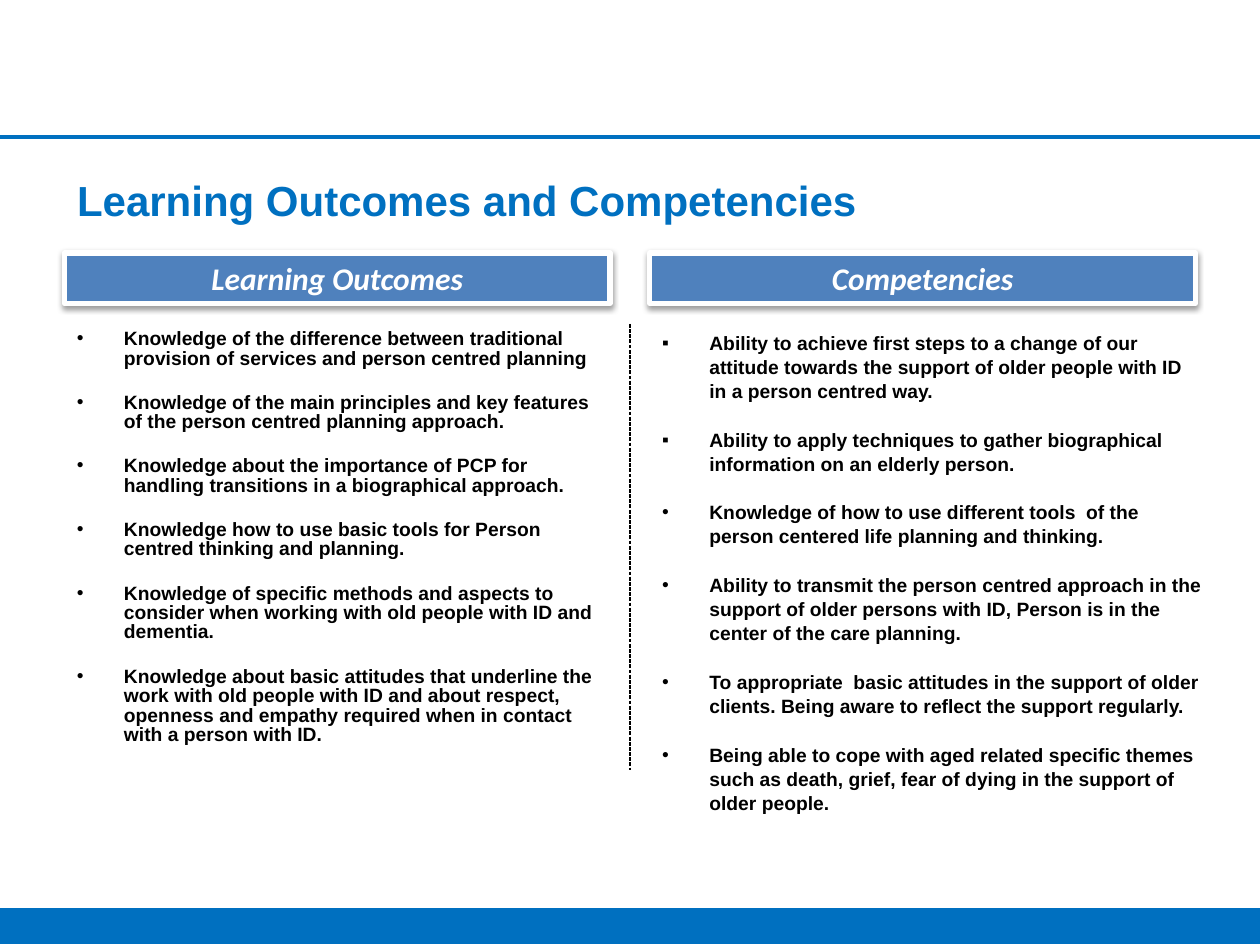
from dataclasses import dataclass

import pptx
import pptx.dml.color
import pptx.enum.dml
import pptx.enum.shapes
import pptx.enum.text
import pptx.oxml
import pptx.oxml.ns
import pptx.util

Cm = pptx.util.Cm
Pt = pptx.util.Pt
RGBColor = pptx.dml.color.RGBColor
ALIGN = pptx.enum.text.PP_ALIGN
ANCHOR = pptx.enum.text.MSO_ANCHOR
RECT = pptx.enum.shapes.MSO_SHAPE.RECTANGLE
LINE = pptx.enum.shapes.MSO_CONNECTOR.STRAIGHT
DASH = pptx.enum.dml.MSO_LINE.SQUARE_DOT

BLUE = RGBColor(0x00, 0x70, 0xC0)
STEEL = RGBColor(0x4F, 0x81, 0xBD)
WHITE = RGBColor(0xFF, 0xFF, 0xFF)
BLACK = RGBColor(0x00, 0x00, 0x00)

WIDTH = 25.4
LEFT = 1.3
HEAD_TOP, HEAD_WIDTH, HEAD_HEIGHT = 5.1, 11, 1.02
LIST_TOP = 6.53
INDENT = 0.95
DOT, SQUARE = "•", "▪"

SHADOW = (
    f'<a:effectLst {pptx.oxml.ns.nsdecls("a")}>'
    '<a:outerShdw blurRad="39370" dist="20320" dir="5400000" rotWithShape="0">'
    '<a:srgbClr val="000000"><a:alpha val="38000"/></a:srgbClr>'
    '</a:outerShdw></a:effectLst>'
)
FLAT = f'<a:effectLst {pptx.oxml.ns.nsdecls("a")}/>'


@dataclass
class Item:
    text: str
    mark: str = DOT


@dataclass
class Column:
    head: str
    left: float
    width: float
    height: float
    spacing: float
    items: list[Item]


COLUMNS = [
    Column("Learning Outcomes", LEFT, 11, 9, 0.84, [
        Item("Knowledge of the difference between traditional provision of "
             "services and person centred planning"),
        Item("Knowledge of the main principles and key features of the person "
             "centred planning approach."),
        Item("Knowledge about the importance of PCP for handling transitions "
             "in a biographical approach."),
        Item("Knowledge how to use basic tools for Person centred thinking "
             "and planning."),
        Item("Knowledge of specific methods and aspects to consider when "
             "working with old people with ID and dementia."),
        Item("Knowledge about basic attitudes that underline the work with "
             "old people with ID and about respect, openness and empathy "
             "required when in contact with a person with ID."),
    ]),
    Column("Competencies", 13.1, 11.4, 10, 1.04, [
        Item("Ability to achieve first steps to a change of our attitude "
             "towards the support of older people with ID in a person "
             "centred way.", SQUARE),
        Item("Ability to apply techniques to gather biographical information "
             "on an elderly person.", SQUARE),
        Item("Knowledge of how to use different tools  of the person centered "
             "life planning and thinking."),
        Item("Ability to transmit the person centred approach in the support "
             "of older persons with ID, Person is in the center of the care "
             "planning."),
        Item("To appropriate  basic attitudes in the support of older "
             "clients. Being aware to reflect the support regularly."),
        Item("Being able to cope with aged related specific themes such as "
             "death, grief, fear of dying in the support of older people."),
    ]),
]


def add_run(para, text: str, size: float, color: RGBColor,
            face: str = "Arial", slant: bool = False) -> None:
    run = para.add_run()
    run.text = text
    font = run.font
    font.name, font.size = face, Pt(size)
    font.bold, font.italic = True, slant
    font.color.rgb = color


def add_line(slide, start: tuple, end: tuple, color: RGBColor, weight: float):
    line = slide.shapes.add_connector(LINE, *map(Cm, start + end))
    line.line.color.rgb = color
    line.line.width = Pt(weight)
    line._element.spPr.append(pptx.oxml.parse_xml(FLAT))
    return line


def add_bar(slide) -> None:
    bar = slide.shapes.add_shape(RECT, 0, Cm(18.31), Cm(WIDTH), Cm(0.72))
    bar.shadow.inherit = False
    bar.fill.solid()
    bar.fill.fore_color.rgb = BLUE
    bar.line.fill.background()


def add_title(slide) -> None:
    title = slide.shapes.title
    title.left, title.top = Cm(LEFT), Cm(3.12)
    title.width, title.height = Cm(22.8), Cm(1.8)
    frame = title.text_frame
    frame.vertical_anchor = ANCHOR.MIDDLE
    para = frame.paragraphs[0]
    para.alignment = ALIGN.LEFT
    add_run(para, "Learning Outcomes and Competencies", 24, BLUE)


def add_head(slide, column: Column) -> None:
    box = slide.shapes.add_shape(RECT, Cm(column.left), Cm(HEAD_TOP),
                                 Cm(HEAD_WIDTH), Cm(HEAD_HEIGHT))
    box.fill.solid()
    box.fill.fore_color.rgb = STEEL
    box.line.color.rgb = WHITE
    box.line.width = Pt(3)
    box._element.spPr.append(pptx.oxml.parse_xml(SHADOW))
    frame = box.text_frame
    frame.vertical_anchor = ANCHOR.MIDDLE
    para = frame.paragraphs[0]
    para.alignment = ALIGN.CENTER
    add_run(para, column.head, 18, WHITE, "Calibri", True)


def set_mark(para, mark: str) -> None:
    """Give the paragraph a bullet with a hanging indent."""
    props = para._p.get_or_add_pPr()
    props.set("marL", str(Cm(INDENT)))
    props.set("indent", str(-Cm(INDENT)))
    props.append(pptx.oxml.parse_xml(
        f'<a:buFont {pptx.oxml.ns.nsdecls("a")} typeface="Arial"/>'))
    props.append(pptx.oxml.parse_xml(
        f'<a:buChar {pptx.oxml.ns.nsdecls("a")} char="{mark}"/>'))


def add_list(slide, column: Column) -> None:
    box = slide.shapes.add_textbox(Cm(column.left), Cm(LIST_TOP),
                                   Cm(column.width), Cm(column.height))
    frame = box.text_frame
    frame.word_wrap = True
    for index, item in enumerate(column.items):
        para = frame.add_paragraph() if index else frame.paragraphs[0]
        set_mark(para, item.mark)
        para.line_spacing = column.spacing
        para.space_before = Pt(2.2 if index else 0)
        para.space_after = Pt(12)
        add_run(para, item.text, 11, BLACK)


def main() -> None:
    deck = pptx.Presentation()
    deck.slide_width, deck.slide_height = Cm(WIDTH), Cm(19.05)
    slide = deck.slides.add_slide(deck.slide_layouts[5])
    add_bar(slide)
    add_line(slide, (0, 2.77), (WIDTH, 2.77), BLUE, 2.25)
    add_title(slide)
    for column in COLUMNS:
        add_list(slide, column)
        add_head(slide, column)
    split = add_line(slide, (WIDTH / 2, LIST_TOP), (WIDTH / 2, 15.52),
                     BLACK, 0.75)
    split.line.dash_style = DASH
    deck.save("out.pptx")


if __name__ == "__main__":
    main()
